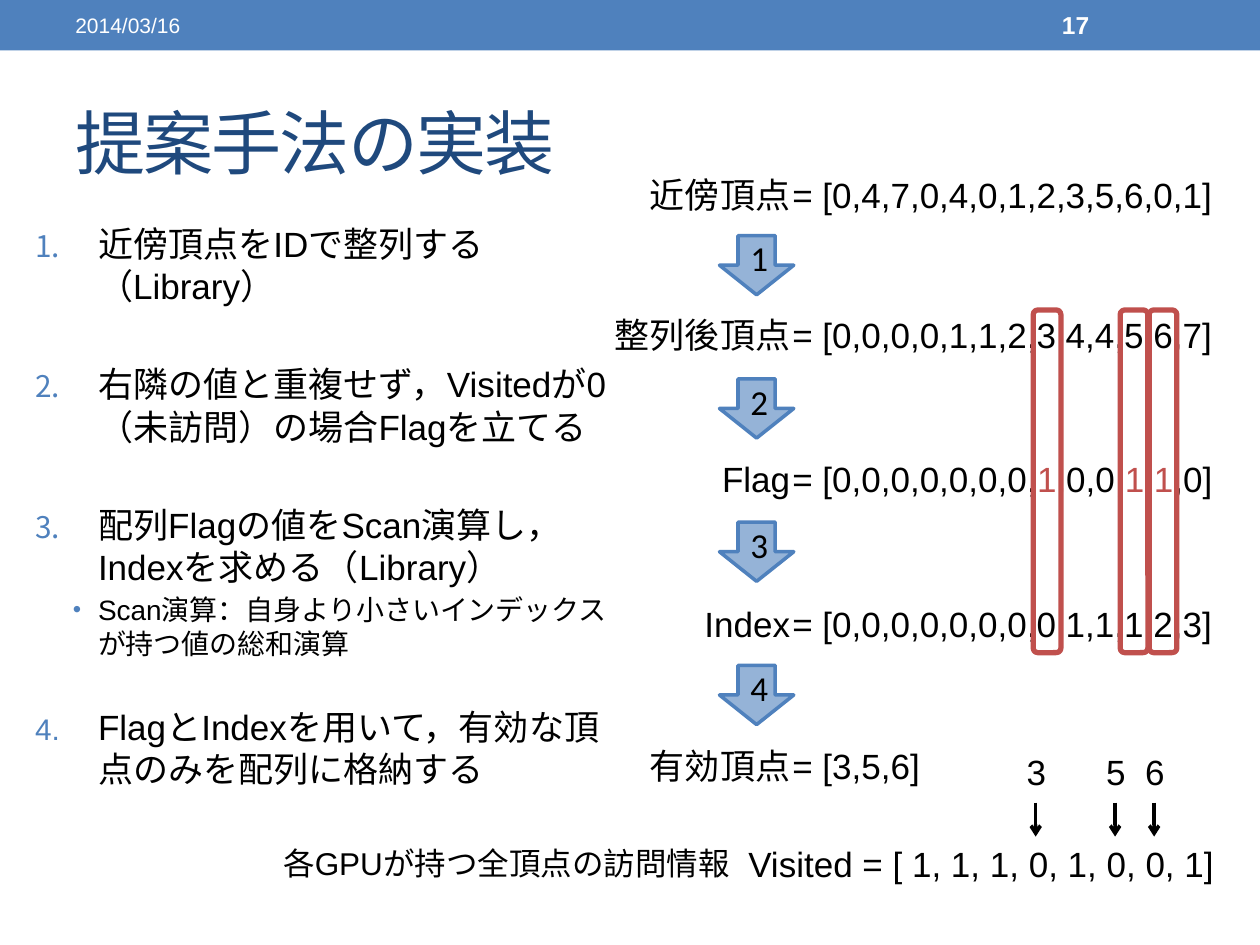
from lxml import etree
from pptx import Presentation
from pptx import util as u
from pptx.dml.color import RGBColor
from pptx.enum import shapes, text
from pptx.oxml.ns import qn

COLS, ROWS = 100, 75
W, H = u.Inches(10), u.Inches(7.5)
COLORS = {"blue": "4F81BD", "pale": "95B3D7", "navy": "1F497D",
          "red": "C0504D", "black": "000000", "white": "FFFFFF"}
LEFT, CENTER, RIGHT = text.PP_ALIGN.LEFT, text.PP_ALIGN.CENTER, text.PP_ALIGN.RIGHT
TOP, MIDDLE = text.MSO_ANCHOR.TOP, text.MSO_ANCHOR.MIDDLE

LABEL_RIGHT, VALUE_LEFT, LINE_H = 63.7, 61.9, 4.4
ARRAYS = [
    (13.3, "近傍頂点", ["= [0,4,7,0,4,0,1,2,3,5,6,0,1]"]),
    (24.4, "整列後頂点", ["= [0,0,0,0,1,1,2,3,4,4,5,6,7]"]),
    (35.8, "Flag", ["= [0,0,0,0,0,0,0,", ("1", "red"), ",0,0,", ("1", "red"),
                    ",", ("1", "red"), ",0]"]),
    (47.3, "Index", ["= [0,0,0,0,0,0,0,0,1,1,1,2,3]"]),
    (58.6, "有効頂点", ["= [3,5,6]"]),
]
# text, numbered, space before in points
STEPS = [
    ("近傍頂点をIDで整列する（Library）", True, 4),
    ("右隣の値と重複せず，Visitedが0（未訪問）の場合Flagを立てる", True, 32),
    ("配列Flagの値をScan演算し，Indexを求める（Library）", True, 32),
    ("Scan演算：自身より小さいインデックスが持つ値の総和演算", False, 3.2),
    ("FlagとIndexを用いて，有効な頂点のみを配列に格納する", True, 26),
]


def rgb(name):
    return RGBColor.from_string(COLORS[name])


def x(col):
    return round(W * col / COLS)


def y(row):
    return round(H * row / ROWS)


def place(col, row, cols, rows):
    return x(col), y(row), x(cols), y(rows)


def add_runs(p, runs, size=20, color="black", font="Arial", bold=False, spacing=None):
    """Each run is a string, or a (string, colour name) pair."""
    for run in runs:
        words, run_color = (run, color) if isinstance(run, str) else run
        r = p.add_run()
        r.text = words
        r.font.size, r.font.name, r.font.bold = u.Pt(size), font, bold
        r.font.color.rgb = rgb(run_color)
        if spacing is not None:
            r._r.get_or_add_rPr().set("spc", str(spacing * 100))


def add_text(s, at, runs, align=LEFT, anchor=TOP, **fmt):
    tf = s.shapes.add_textbox(*place(*at)).text_frame
    tf.word_wrap, tf.vertical_anchor = True, anchor
    p = tf.paragraphs[0]
    p.alignment = align
    add_runs(p, runs, **fmt)


def add_shape(s, kind, at, fill=None, line=None, width=0):
    sp = s.shapes.add_shape(kind, *place(*at))
    sp.shadow.inherit = False
    if fill:
        sp.fill.solid()
        sp.fill.fore_color.rgb = rgb(fill)
    else:
        sp.fill.background()
    if line:
        sp.line.color.rgb, sp.line.width = rgb(line), u.Pt(width)
    else:
        sp.line.fill.background()
    return sp


def add_arrow_line(s, col, top, bottom):
    cx = s.shapes.add_connector(shapes.MSO_CONNECTOR.STRAIGHT,
                                x(col), y(top), x(col), y(bottom))
    cx.line.color.rgb, cx.line.width = rgb("black"), u.Pt(2)
    etree.SubElement(cx.line._get_or_add_ln(), qn("a:tailEnd"), type="arrow")
    etree.SubElement(cx._element.spPr, qn("a:effectLst"))


def set_bullet(p, numbered):
    pPr = p._p.get_or_add_pPr()
    pPr.set("marL", str(u.Inches(0.5)))
    pPr.set("indent", str(u.Inches(-0.5 if numbered else -0.2)))
    clr = etree.SubElement(pPr, qn("a:buClr"))
    etree.SubElement(clr, qn("a:srgbClr"), val=COLORS["blue"])
    etree.SubElement(pPr, qn("a:buSzPct"), val="85000")
    if numbered:
        etree.SubElement(pPr, qn("a:buFont"), typeface="+mj-lt")
        etree.SubElement(pPr, qn("a:buAutoNum"), type="arabicPeriod")
    else:
        etree.SubElement(pPr, qn("a:buFont"), typeface="Arial")
        etree.SubElement(pPr, qn("a:buChar"), char="•")


def add_steps(s):
    tf = s.shapes.add_textbox(*place(1.8, 17.2, 47.7, 52.2)).text_frame
    tf.word_wrap = True
    for i, (words, numbered, before) in enumerate(STEPS):
        p = tf.add_paragraph() if i else tf.paragraphs[0]
        p.level = 0 if numbered else 1
        p.space_before = u.Pt(before)
        set_bullet(p, numbered)
        add_runs(p, [words], size=20 if numbered else 16)


def add_arrays(s):
    for row, label, values in ARRAYS:
        add_text(s, (LABEL_RIGHT - 18, row, 18, LINE_H), [label], align=RIGHT)
        add_text(s, (VALUE_LEFT, row, 36.4, LINE_H), values)
    for col in (82, 88.9, 91.2):
        add_shape(s, shapes.MSO_SHAPE.ROUNDED_RECTANGLE, (col, 24.6, 2.2, 27.2),
                  line="red", width=3)


def add_visited(s):
    add_text(s, (58.4, 66.4, 39.5, LINE_H), ["Visited = [ 1, 1, 1, 0, 1, 0, 0, 1]"])
    for col, vertex in ((82.2, "3"), (88.5, "5"), (91.6, "6")):
        add_arrow_line(s, col, 63.7, 66.4)
        add_text(s, (col - 1.7, 59.1, 3.6, LINE_H), [vertex])
    add_text(s, (21.5, 66.5, 37.7, 4), ["各GPUが持つ全頂点の訪問情報"], size=18)


def add_step_arrows(s):
    for i in range(4):
        sp = add_shape(s, shapes.MSO_SHAPE.DOWN_ARROW, (57.1, 18.7 + 11.37 * i, 5.9, 4.7),
                       fill="pale", line="blue", width=2)
        tf = sp.text_frame
        tf.vertical_anchor = MIDDLE
        tf.paragraphs[0].alignment = CENTER
        add_runs(tf.paragraphs[0], [str(i + 1)], font="Calibri")


def main():
    prs = Presentation()
    prs.slide_width, prs.slide_height = W, H
    s = prs.slides.add_slide(prs.slide_layouts[6])
    add_shape(s, shapes.MSO_SHAPE.RECTANGLE, (0, 0, COLS, 4), fill="blue")
    add_text(s, (5, 5.8, 90, 10.8), ["提案手法の実装"], anchor=MIDDLE,
             size=40, color="navy", spacing=-1)
    add_steps(s)
    add_text(s, (5, 0.2, 31.7, 3.6), ["2014/03/16"], anchor=MIDDLE, size=12, color="white")
    add_text(s, (83.3, 0.2, 11.7, 3.6), ["17"], anchor=MIDDLE,
             size=14, color="white", bold=True)
    add_arrays(s)
    add_visited(s)
    add_step_arrows(s)
    prs.save("out.pptx")


if __name__ == "__main__":
    main()
